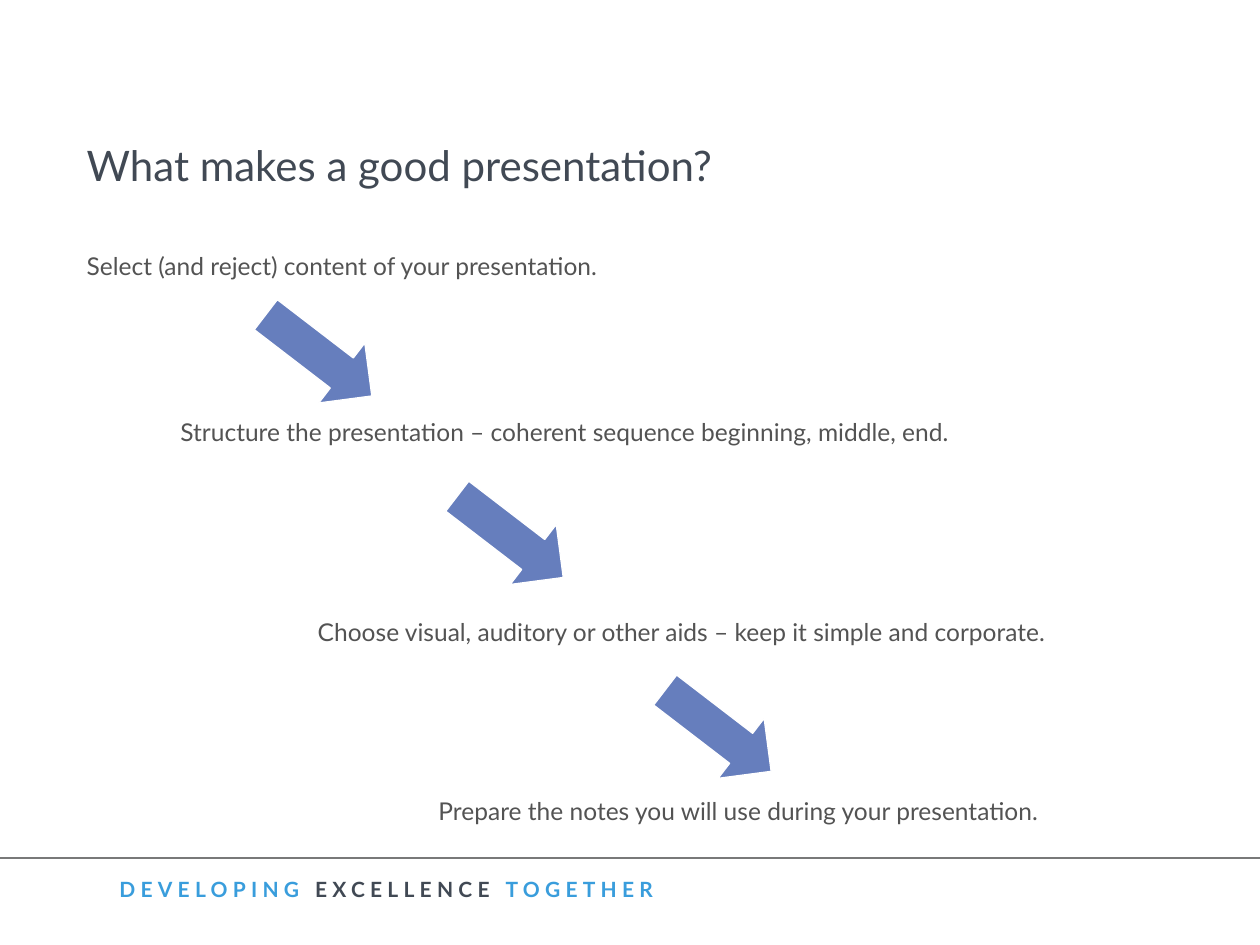
from typing import NamedTuple

from lxml import etree
from pptx import Presentation
from pptx.dml.color import RGBColor
from pptx.enum import shapes, text
from pptx.oxml import ns
from pptx.util import Pt

FONT = "Lato"
SLATE, GREY, BLUE, ARROW, WHITE = "414954", "535353", "399DDC", "667EBD", "FFFFFF"
PAGE_WIDTH, PAGE_HEIGHT = 720, 540
ARROW_WIDTH, ARROW_LENGTH, ARROW_TURN = 43.2, 76.3, 307.5


class Step(NamedTuple):
    words: str
    left: float
    top: float
    width: float


class Place(NamedTuple):
    left: float
    top: float


STEPS = [
    Step("Select (and reject) content of your presentation.", 42.5, 139.7, 440),
    Step("Structure the presentation – coherent sequence beginning, middle, end.",
         96, 234.7, 480),
    Step("Choose visual, auditory or other aids – keep it simple and corporate.",
         174.5, 349.2, 452),
    Step("Prepare the notes you will use during your presentation.", 243.5, 451.4, 380),
]
ARROWS = [Place(160.6, 164.9), Place(270, 268.6), Place(388.8, 379.4)]


def colour(code: str) -> RGBColor:
    return RGBColor.from_string(code)


def add_box(page, left: float, top: float, width: float, height: float, *,
            wrap: bool = True, anchor=text.MSO_ANCHOR.TOP):
    """Add a text box and return its first paragraph."""
    box = page.shapes.add_textbox(Pt(left), Pt(top), Pt(width), Pt(height))
    box.text_frame.word_wrap = wrap
    box.text_frame.vertical_anchor = anchor
    return box.text_frame.paragraphs[0]


def add_text(para, words: str, *, size: float, ink: str, bold: bool = False,
             spacing: float = 0) -> None:
    """Append a run; spacing is the gap between letters in points."""
    span = para.add_run()
    span.text = words
    span.font.name = FONT
    span.font.size = Pt(size)
    span.font.bold = bold
    span.font.color.rgb = colour(ink)
    if spacing:
        span._r.get_or_add_rPr().set("spc", str(round(spacing * 100)))


def add_arrow(page, place: Place) -> None:
    arrow = page.shapes.add_shape(
        shapes.MSO_SHAPE.DOWN_ARROW, Pt(place.left), Pt(place.top),
        Pt(ARROW_WIDTH), Pt(ARROW_LENGTH))
    arrow.rotation = ARROW_TURN
    arrow.shadow.inherit = False
    arrow.fill.solid()
    arrow.fill.fore_color.rgb = colour(ARROW)
    arrow.line.color.rgb = colour(WHITE)
    arrow.line.width = Pt(0.75)


def add_footer(page) -> None:
    rule_top = 490.3
    rule = page.shapes.add_connector(
        shapes.MSO_CONNECTOR.STRAIGHT, Pt(0), Pt(rule_top), Pt(PAGE_WIDTH), Pt(rule_top))
    rule.line.color.rgb = colour("787979")
    rule.line.width = Pt(0.75)
    etree.SubElement(rule.element.spPr, ns.qn("a:effectLst"))

    para = add_box(page, 61.2, 497.5, 391.7, 31.7, wrap=False)
    for words, ink in (("DEVELOPING", BLUE), (" EXCELLENCE ", SLATE), ("TOGETHER", BLUE)):
        add_text(para, words, size=12, ink=ink, bold=True, spacing=3)


def main() -> None:
    deck = Presentation()
    deck.slide_width, deck.slide_height = Pt(PAGE_WIDTH), Pt(PAGE_HEIGHT)
    page = deck.slides.add_slide(deck.slide_layouts[6])

    add_footer(page)
    title = add_box(page, 42.5, 71.3, 487.4, 45.4, anchor=text.MSO_ANCHOR.MIDDLE)
    add_text(title, "What makes a good presentation?", size=24, ink=SLATE)
    for step in STEPS:
        para = add_box(page, step.left, step.top, step.width, 24.5)
        add_text(para, step.words, size=14, ink=GREY)
    for place in ARROWS:
        add_arrow(page, place)

    deck.save("out.pptx")


if __name__ == "__main__":
    main()
